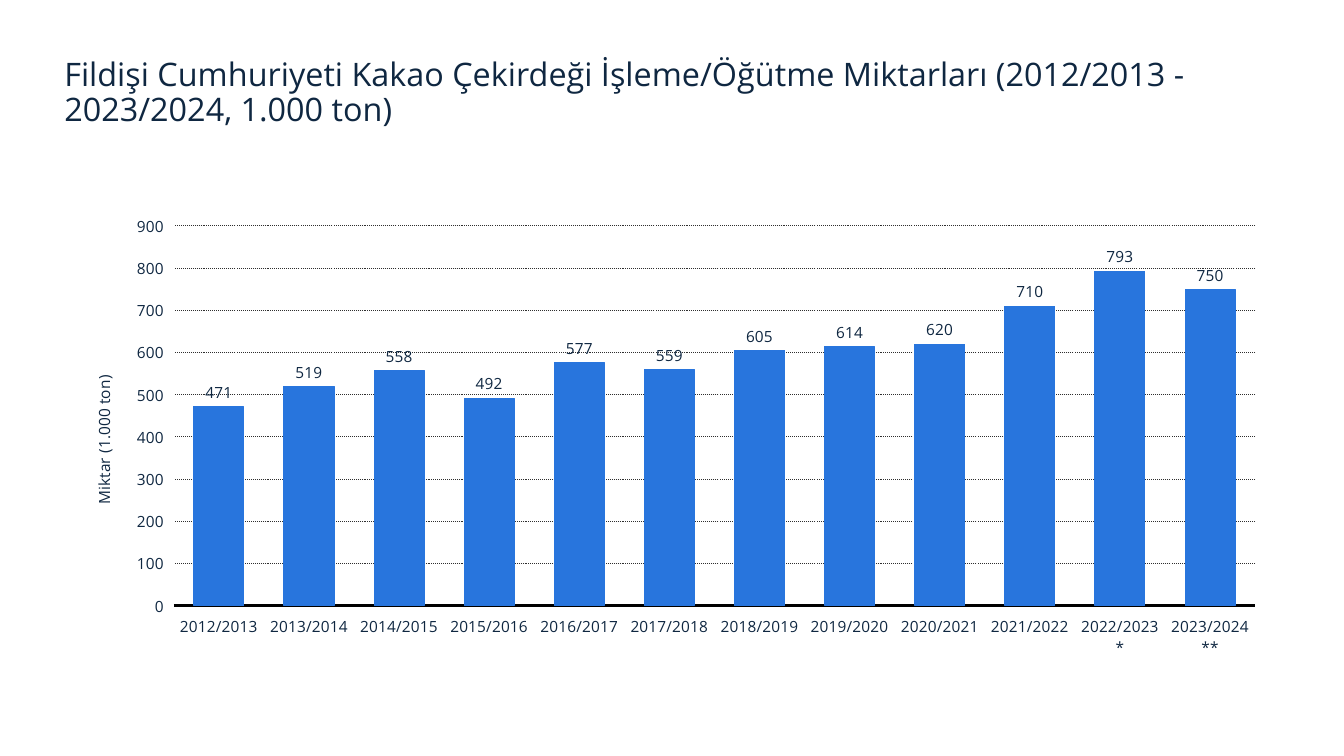
import pptx
import pptx.chart.data
import pptx.dml.color
import pptx.enum.chart
import pptx.enum.dml
import pptx.enum.text
import pptx.oxml
import pptx.oxml.ns
import pptx.util
from dataclasses import dataclass


@dataclass(frozen=True)
class Theme:
    font: str = "Open Sans"
    ink: str = "0F2741"
    bar: str = "2875DD"
    axis: str = "000000"
    grid: str = "2F2F2F"
    title_size: float = 23.1
    label_size: float = 11
    thin: float = 0.75
    thick: float = 2


TITLE = (
    "Fildişi Cumhuriyeti Kakao Çekirdeği İşleme/Öğütme Miktarları "
    "(2012/2013 - 2023/2024, 1.000 ton)"
)
AXIS_TITLE = "Miktar (1.000 ton)"
FIRST_SEASON = 2012
PROVISIONAL_MARKS = {2022: "*", 2023: "**"}
GRINDINGS = [471, 519, 558, 492, 577, 559, 605, 614, 620, 710, 793, 750]
SEASONS = [
    f"{year}/{year + 1}{PROVISIONAL_MARKS.get(year, '')}"
    for year in range(FIRST_SEASON, FIRST_SEASON + len(GRINDINGS))
]


def apply(target, values):
    for name, value in values.items():
        setattr(target, name, value)


class SlideBuilder:
    GRID = 100

    def __init__(self, presentation, theme):
        self.presentation = presentation
        self.theme = theme
        self.slide = presentation.slides.add_slide(presentation.slide_layouts[6])

    def box(self, column, row, columns, rows):
        width = self.presentation.slide_width / self.GRID
        height = self.presentation.slide_height / self.GRID
        return [
            round(length)
            for length in (column * width, row * height, columns * width, rows * height)
        ]

    def style_font(self, font, size):
        apply(font, {"name": self.theme.font, "size": pptx.util.Pt(size), "bold": False})
        font.color.rgb = pptx.dml.color.RGBColor.from_string(self.theme.ink)

    def style_line(self, line, color, width):
        line.color.rgb = pptx.dml.color.RGBColor.from_string(color)
        line.width = pptx.util.Pt(width)

    def place(self, element, index, **shares):
        for layout in element.findall(pptx.oxml.ns.qn("c:layout")):
            element.remove(layout)
        target = '<c:layoutTarget val="inner"/>' if "w" in shares else ""
        modes = "".join(f'<c:{name}Mode val="edge"/>' for name in shares if name in "xy")
        values = "".join(f'<c:{name} val="{share}"/>' for name, share in shares.items())
        element.insert(index, pptx.oxml.parse_xml(
            f'<c:layout {pptx.oxml.ns.nsdecls("c")}><c:manualLayout>'
            f"{target}{modes}{values}</c:manualLayout></c:layout>"
        ))

    def add_title(self, text, *cells):
        frame = self.slide.shapes.add_textbox(*self.box(*cells)).text_frame
        apply(frame, {
            "word_wrap": True,
            "vertical_anchor": pptx.enum.text.MSO_ANCHOR.BOTTOM,
        })
        paragraph = frame.paragraphs[0]
        paragraph.line_spacing = 0.9
        run = paragraph.add_run()
        run.text = text
        self.style_font(run.font, self.theme.title_size)

    def add_columns(self, categories, values, axis_title, *cells):
        data = pptx.chart.data.CategoryChartData()
        data.categories = categories
        data.add_series("Series 1", values)
        chart = self.slide.shapes.add_chart(
            pptx.enum.chart.XL_CHART_TYPE.COLUMN_CLUSTERED, *self.box(*cells), data
        ).chart
        apply(chart, {"has_legend": False, "has_title": False})
        self.style_font(chart.font, self.theme.label_size)
        self.style_plot(chart.plots[0])
        self.style_axes(chart.category_axis, chart.value_axis, axis_title)
        plot_area = chart.element.find(".//" + pptx.oxml.ns.qn("c:plotArea"))
        self.place(plot_area, 0, x=0.09, y=0.04, w=0.89, h=0.83)

    def style_plot(self, plot):
        apply(plot, {
            "gap_width": 80,
            "overlap": -30,
            "vary_by_categories": False,
            "has_data_labels": True,
        })
        apply(plot.data_labels, {
            "show_value": True,
            "position": pptx.enum.chart.XL_LABEL_POSITION.OUTSIDE_END,
        })
        self.style_font(plot.data_labels.font, self.theme.label_size)
        series = plot.series[0]
        series.format.fill.solid()
        series.format.fill.fore_color.rgb = pptx.dml.color.RGBColor.from_string(self.theme.bar)
        self.style_line(series.format.line, self.theme.bar, self.theme.thin)

    def style_axes(self, category_axis, value_axis, axis_title):
        for axis in (category_axis, value_axis):
            apply(axis, {
                "major_tick_mark": pptx.enum.chart.XL_TICK_MARK.NONE,
                "minor_tick_mark": pptx.enum.chart.XL_TICK_MARK.NONE,
                "tick_label_position": pptx.enum.chart.XL_TICK_LABEL_POSITION.LOW,
            })
            self.style_font(axis.tick_labels.font, self.theme.label_size)
        self.style_line(category_axis.format.line, self.theme.axis, self.theme.thick)
        apply(value_axis, {
            "minimum_scale": 0,
            "maximum_scale": 900,
            "major_unit": 100,
            "has_major_gridlines": True,
        })
        apply(value_axis.tick_labels, {
            "number_format": "#,##0",
            "number_format_is_linked": False,
        })
        value_axis.format.line.fill.background()
        grid_line = value_axis.major_gridlines.format.line
        self.style_line(grid_line, self.theme.grid, self.theme.thin)
        grid_line.dash_style = pptx.enum.dml.MSO_LINE.ROUND_DOT
        title = value_axis.axis_title
        run = title.text_frame.paragraphs[0].add_run()
        run.text = axis_title
        self.style_font(run.font, self.theme.label_size)
        title.text_frame._txBody.bodyPr.set("rot", "-5400000")
        self.place(title._element, 1, x=0.02, y=0.36)


def main():
    presentation = pptx.Presentation()
    apply(presentation, {
        "slide_width": pptx.util.Inches(13.33),
        "slide_height": pptx.util.Inches(7.5),
    })
    builder = SlideBuilder(presentation, Theme())
    builder.add_columns(SEASONS, GRINDINGS, AXIS_TITLE, 4.8, 27.47, 90.4, 60.53)
    builder.add_title(TITLE, 4.05, 6.13, 91.82, 11.47)
    presentation.save("out.pptx")


if __name__ == "__main__":
    main()
